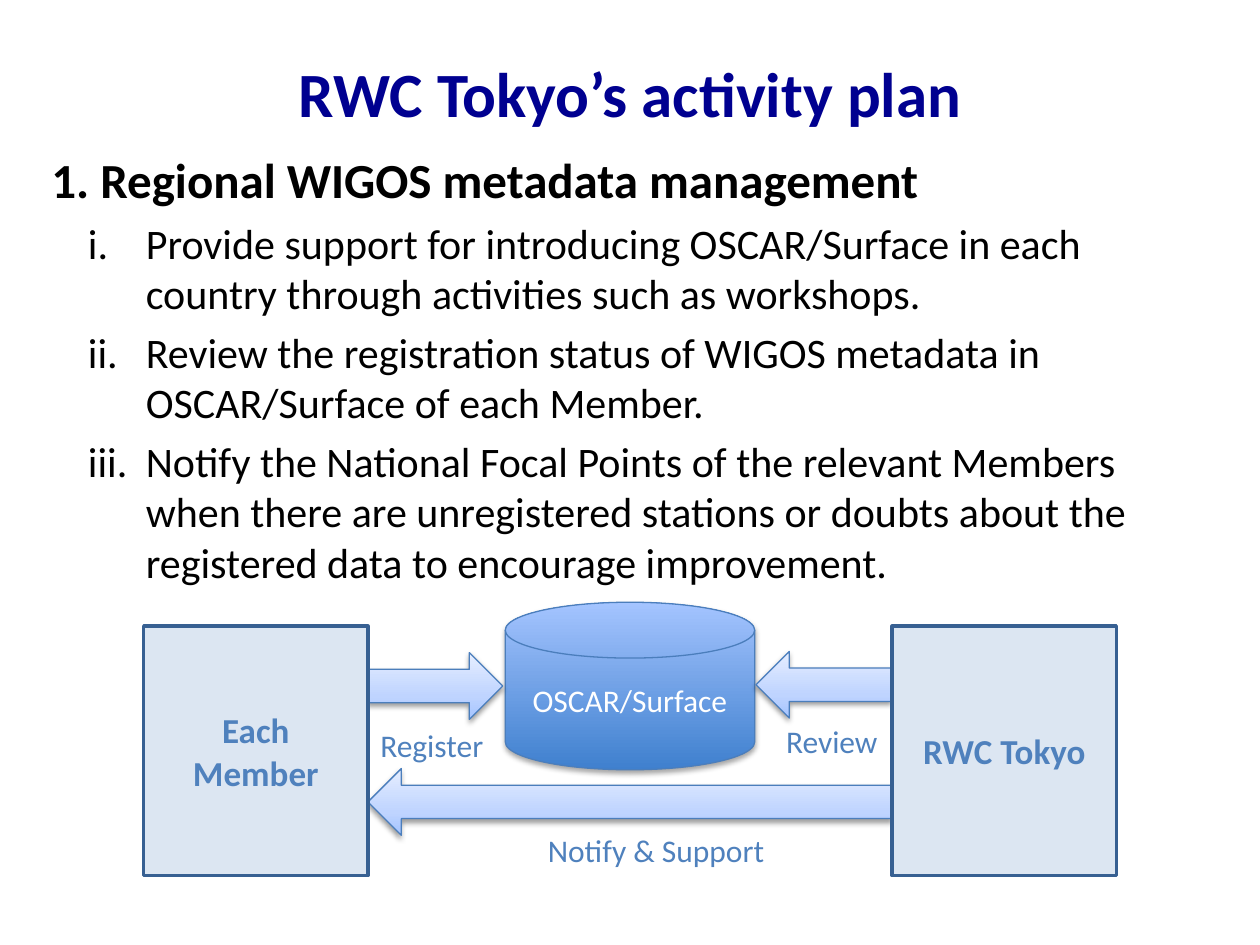
from copy import deepcopy

from lxml.etree import SubElement
from pptx import Presentation
from pptx.dml.color import RGBColor
from pptx.enum.shapes import MSO_SHAPE
from pptx.enum.text import MSO_ANCHOR, MSO_AUTO_SIZE, PP_ALIGN
from pptx.oxml.ns import qn
from pptx.util import Inches, Pt

NAVY = RGBColor(0x00, 0x00, 0x90)
BLACK = RGBColor(0x00, 0x00, 0x00)
WHITE = RGBColor(0xFF, 0xFF, 0xFF)
BLUE = RGBColor(0x4F, 0x81, 0xBD)
EDGE_BLUE = RGBColor(0x4B, 0x7E, 0xBC)
BOX_FILL = RGBColor(0xDC, 0xE6, 0xF2)
BOX_EDGE = RGBColor(0x37, 0x60, 0x92)
DISK_STOPS = [(0, RGBColor(0x3F, 0x80, 0xCE)), (1, RGBColor(0xA4, 0xC4, 0xFF))]
ARROW_STOPS = [
    (0, RGBColor(0xA4, 0xC4, 0xFF)),
    (0.35, RGBColor(0xBF, 0xD4, 0xFF)),
    (1, RGBColor(0xE6, 0xEE, 0xFF)),
]

BOX_TOP, BOX_WIDTH, BOX_HEIGHT = 4.97, 1.78, 1.98
MEMBER_LEFT, CENTRE_LEFT = 1.14, 7.08
MEMBER_RIGHT = MEMBER_LEFT + BOX_WIDTH
ARROW_WIDTH, ARROW_HEIGHT = 1.07, 0.53

ACTIVITIES = [
    "Provide support for introducing OSCAR/Surface in each country through "
    "activities such as workshops.",
    "Review the registration status of WIGOS metadata in OSCAR/Surface of "
    "each Member.",
    "Notify the National Focal Points of the relevant Members when there are "
    "unregistered stations or doubts about the registered data to encourage "
    "improvement.",
]


class PlanSlide:
    font = "Calibri"

    def __init__(self, slide):
        self.slide = slide

    def add_text(self, paragraph, text, size, color, bold=False):
        run = paragraph.add_run()
        run.text = text
        run.font.name = self.font
        run.font.size = Pt(size)
        run.font.bold = bold
        run.font.color.rgb = color

    def text_frame(self, left, top, width, height, wrap=True):
        box = self.slide.shapes.add_textbox(
            Inches(left), Inches(top), Inches(width), Inches(height))
        box.text_frame.word_wrap = wrap
        return box.text_frame

    def title(self, text):
        frame = self.text_frame(0.5, 0.11, 9, 1.25)
        frame.vertical_anchor = MSO_ANCHOR.MIDDLE
        frame.paragraphs[0].alignment = PP_ALIGN.CENTER
        self.add_text(frame.paragraphs[0], text, 36, NAVY, bold=True)

    def body(self, heading, items):
        frame = self.text_frame(0.31, 1.14, 9.46, 3.73)
        self.add_text(frame.paragraphs[0], heading, 28, BLACK, bold=True)
        for item in items:
            paragraph = frame.add_paragraph()
            paragraph.level = 1
            paragraph.space_before = Pt(4.8)
            self.number(paragraph)
            self.add_text(paragraph, item, 24, BLACK)

    def number(self, paragraph):
        """Give the paragraph a lower-case Roman number and a hanging indent."""
        properties = paragraph._p.get_or_add_pPr()
        properties.set("marL", str(Inches(0.75)))
        properties.set("indent", str(Inches(-0.46)))
        SubElement(properties, qn("a:buFont"), typeface="+mj-lt")
        SubElement(properties, qn("a:buAutoNum"), type="romanLcPeriod")

    def label(self, text, left, top, width):
        frame = self.text_frame(left, top, width, 0.4, wrap=False)
        frame.auto_size = MSO_AUTO_SIZE.SHAPE_TO_FIT_TEXT
        self.add_text(frame.paragraphs[0], text, 18, BLUE)

    def shape(self, kind, left, top, width, height, edge, edge_width):
        shape = self.slide.shapes.add_shape(
            kind, Inches(left), Inches(top), Inches(width), Inches(height))
        shape.line.color.rgb = edge
        shape.line.width = Pt(edge_width)
        shape.shadow.inherit = False
        return shape

    def caption(self, shape, text, size, color, bold=False):
        frame = shape.text_frame
        frame.word_wrap = True
        frame.vertical_anchor = MSO_ANCHOR.MIDDLE
        frame.paragraphs[0].alignment = PP_ALIGN.CENTER
        self.add_text(frame.paragraphs[0], text, size, color, bold)

    def shade(self, shape, stops):
        """Fill from bottom to top through the given (position, colour) stops."""
        shape.fill.gradient()
        shape.fill.gradient_angle = 90
        stop_list = next(shape._element.spPr.iter(qn("a:gsLst")))
        while len(stop_list) < len(stops):
            stop_list.append(deepcopy(stop_list[-1]))
        for stop, (position, color) in zip(shape.fill.gradient_stops, stops):
            stop.position = position
            stop.color.rgb = color

    def drop_shadow(self, shape, distance, opacity):
        effects = shape._element.spPr.find(qn("a:effectLst"))
        shadow = SubElement(
            effects, qn("a:outerShdw"), blurRad=str(Pt(3.1)),
            dist=str(Pt(distance)), dir="5400000", rotWithShape="0")
        black = SubElement(shadow, qn("a:srgbClr"), val=str(BLACK))
        SubElement(black, qn("a:alpha"), val=str(opacity * 1000))

    def party(self, text, left):
        box = self.shape(MSO_SHAPE.RECTANGLE, left, BOX_TOP, BOX_WIDTH,
                         BOX_HEIGHT, BOX_EDGE, 2)
        box.fill.solid()
        box.fill.fore_color.rgb = BOX_FILL
        self.caption(box, text, 20, BLUE, bold=True)

    def database(self, text):
        disk = self.shape(MSO_SHAPE.FLOWCHART_MAGNETIC_DISK,
                          4.01, 4.78, 1.98, 1.33, EDGE_BLUE, 0.75)
        self.shade(disk, DISK_STOPS)
        self.drop_shadow(disk, 1.8, 35)
        self.caption(disk, text, 18, WHITE)

    def arrow(self, kind, left, top, width=ARROW_WIDTH):
        arrow = self.shape(kind, left, top, width, ARROW_HEIGHT, EDGE_BLUE, 0.75)
        self.shade(arrow, ARROW_STOPS)
        self.drop_shadow(arrow, 1.6, 38)


def main():
    deck = Presentation()
    deck.slide_width, deck.slide_height = Inches(10), Inches(7.5)
    plan = PlanSlide(deck.slides.add_slide(deck.slide_layouts[6]))

    plan.title("RWC Tokyo’s activity plan")
    plan.body("1. Regional WIGOS metadata management", ACTIVITIES)

    plan.database("OSCAR/Surface")
    plan.arrow(MSO_SHAPE.RIGHT_ARROW, MEMBER_RIGHT, 5.18)
    plan.label("Register", MEMBER_RIGHT, 5.71, 1.03)
    plan.arrow(MSO_SHAPE.LEFT_ARROW, 6, 5.17)
    plan.label("Review", 6.14, 5.68, 0.94)
    plan.arrow(MSO_SHAPE.LEFT_ARROW, MEMBER_RIGHT, 6.1, 4.15)
    plan.label("Notify & Support", 4.25, 6.55, 1.94)
    plan.party("Each Member", MEMBER_LEFT)
    plan.party("RWC Tokyo", CENTRE_LEFT)

    deck.save("out.pptx")


if __name__ == "__main__":
    main()
